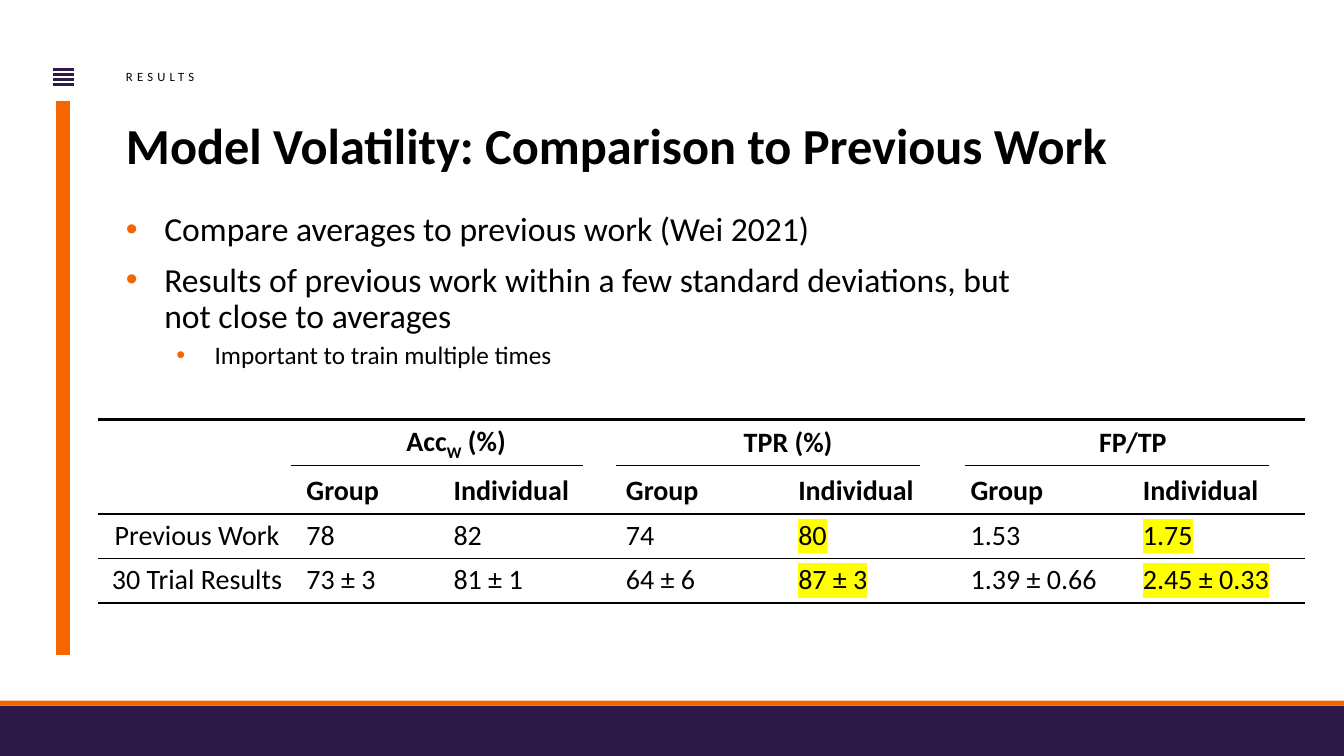
from pptx import Presentation, util as u
from pptx.dml.color import RGBColor
from pptx.enum import shapes, text
from pptx.oxml import xmlchemy as x
from pptx.oxml.ns import qn
from lxml import etree

BLACK = RGBColor(0, 0, 0)
ORANGE = RGBColor(0xF5, 0x66, 0x00)
PURPLE = RGBColor(0x2E, 0x1A, 0x47)
YELLOW = RGBColor(0xFF, 0xFF, 0x00)
FONT = "Calibri"
COLS, ROWS = 160, 90
NO_STYLE = "{2D5ABB26-0587-4C30-8999-92F81FD0307C}"


def grid(n):
    """Turn grid units, twelve to the inch, into a length."""
    return u.Inches(n / 12)


def add_sub(parent, tag, **attrs):
    """Append a drawing element with the given attributes."""
    return etree.SubElement(parent, qn(tag), attrs)


def add_color(parent, tag, color):
    """Append a colour-holding element."""
    el = add_sub(parent, tag)
    add_sub(el, "a:srgbClr", val=str(color))
    return el


def add_line(s, x1, y1, x2, y2, color, width):
    """Draw a straight line between two grid points."""
    line = s.shapes.add_connector(shapes.MSO_CONNECTOR.STRAIGHT,
                                  grid(x1), grid(y1), grid(x2), grid(y2))
    line.line.color.rgb = color
    line.line.width = u.Pt(width)
    add_sub(line._element.spPr, "a:effectLst")


def add_bar(s, box, color):
    """Draw a plain filled rectangle."""
    bar = s.shapes.add_shape(shapes.MSO_SHAPE.RECTANGLE, *map(grid, box))
    bar.shadow.inherit = False
    bar.fill.solid()
    bar.fill.fore_color.rgb = color
    bar.line.fill.background()


def add_run(p, words, size, bold=False):
    """Add one formatted run to a paragraph."""
    r = p.add_run()
    r.text = words
    r.font.size, r.font.bold, r.font.name = u.Pt(size), bold, FONT
    r.font.color.rgb = BLACK
    return r


def set_frame(sp, box):
    """Place a text shape on the grid and clear its insets."""
    sp.left, sp.top, sp.width, sp.height = map(grid, box)
    tf = sp.text_frame
    tf.margin_left = tf.margin_right = tf.margin_top = tf.margin_bottom = 0
    tf.word_wrap = True
    tf.auto_size = text.MSO_AUTO_SIZE.NONE
    tf.vertical_anchor = text.MSO_ANCHOR.TOP
    return tf


def draw_frame(s, box):
    """Draw the menu icon, side bar and footer band."""
    left, top, width, height = box
    for i in range(4):
        y = top + 8.28 + 0.6 * i
        add_line(s, left + 6.36, y, left + 8.76, y, PURPLE, 1.75)
    add_line(s, left + 7.5, top + 12, left + 7.5, top + 78, ORANGE, 10)
    add_bar(s, (left, top + height - 6, width, 6), PURPLE)
    add_bar(s, (left, top + height - 6.6, width, 0.6), ORANGE)


def draw_heading(s, box):
    """Write the section label and the slide title."""
    left, top, width, height = box
    label = s.shapes.add_textbox(0, 0, 0, 0)
    p = set_frame(label, (left, top, 50, 1.7)).paragraphs[0]
    p.line_spacing = 0.9
    r = add_run(p, "RESULTS", 9)
    r.font._element.set("spc", "300")

    p = set_frame(s.shapes.title, (left, top + height - 6, width, 6)).paragraphs[0]
    p.alignment = text.PP_ALIGN.LEFT
    p.line_spacing = 0.8
    add_run(p, "Model Volatility: Comparison to Previous Work", 36, True)


def draw_points(s, box):
    """Fill the body placeholder with bulleted points."""
    points = [
        ("Compare averages to previous work (Wei 2021)", 0),
        ("Results of previous work within a few standard deviations, "
         "but not close to averages", 0),
        ("Important to train multiple times", 1),
    ]
    tf = set_frame(s.placeholders[1], box)
    for i, (words, level) in enumerate(points):
        p = tf.add_paragraph() if i else tf.paragraphs[0]
        p.level = level
        pPr = p._p.get_or_add_pPr()
        pPr.set("marL", str(u.Inches(0.38 + 0.5 * level)))
        pPr.set("indent", str(u.Inches(-0.38)))
        add_color(pPr, "a:buClr", ORANGE)
        add_sub(pPr, "a:buFont", typeface="Arial")
        add_sub(pPr, "a:buChar", char="•")
        p.line_spacing = 0.9
        p.space_before = u.Pt((5 if level else 10) if i else 0)
        add_run(p, words, 18 if level else 24)


def set_borders(cell, top, bottom):
    """Give a cell its top and bottom rules, in points, and no fill."""
    tcPr = cell._tc.get_or_add_tcPr()
    for tag, width in (("a:lnT", top), ("a:lnB", bottom)):
        if width:
            ln = add_sub(tcPr, tag, w=str(u.Pt(width)))
            add_color(ln, "a:solidFill", BLACK)
    cell.fill.background()


def draw_table(s, box):
    """Build the results table and the rules under its group headings."""
    left, top, width, height = box
    widths = [23.64, 17.52] + [20.52] * 5
    heights = [5.52, 5.52, 5.2, 5.2]
    borders = [(2.25, 0), (0, 1.5), (1.5, 1), (1, 1.5)]
    rows = [
        ["", "Acc", "", "TPR (%)", "", "FP/TP", ""],
        [""] + ["Group", "Individual"] * 3,
        ["Previous Work", "78", "82", "74", "80", "1.53", "1.75"],
        ["30 Trial Results", "73 ± 3", "81 ± 1", "64 ± 6", "87 ± 3",
         "1.39 ± 0.66", "2.45 ± 0.33"],
    ]
    tbl = s.shapes.add_table(len(rows), len(widths), *map(grid, box)).table
    tbl._tbl.tblPr.find(qn("a:tableStyleId")).text = NO_STYLE
    tbl.first_row = tbl.horz_banding = False
    for col, w in zip(tbl.columns, widths):
        col.width = grid(w)
    for row, h in zip(tbl.rows, heights):
        row.height = grid(h)

    for i, row in enumerate(rows):
        for j, words in enumerate(row):
            cell = tbl.cell(i, j)
            set_borders(cell, *borders[i])
            if i < 2:
                cell.vertical_anchor = text.MSO_ANCHOR.MIDDLE
            p = cell.text_frame.paragraphs[0]
            if i == 0 or j == 0:
                p.alignment = text.PP_ALIGN.CENTER
            if not words:
                continue
            r = add_run(p, words, 20, i < 2)
            if i > 1 and j in (4, 6):
                mark = add_color(r.font._element, "a:highlight", YELLOW)
                r.font._element.find(qn("a:solidFill")).addnext(mark)

    p = tbl.cell(0, 1).text_frame.paragraphs[0]
    add_run(p, "W", 20, True).font._element.set("baseline", "-25000")
    add_run(p, " (%)", 20, True)
    tbl.cell(0, 0).merge(tbl.cell(1, 0))
    for j in (1, 3, 5):
        tbl.cell(0, j).merge(tbl.cell(0, j + 1))

    for start, length in ((23.04, 34.68), (61.68, 36.24), (103.2, 36.24)):
        y = top + heights[0]
        add_line(s, left + start, y, left + start + length, y, BLACK, 1)


def main():
    """Build and save the slide."""
    prs = Presentation()
    prs.slide_width, prs.slide_height = grid(COLS), grid(ROWS)
    s = prs.slides.add_slide(prs.slide_layouts[1])
    draw_frame(s, (0, 0, COLS, ROWS))
    draw_points(s, (15, 25.32, 108.12, 18.84))
    draw_heading(s, (15, 8.4, 131.5, 12.6))
    draw_table(s, (11.64, 49.92, 143.76, 21.44))
    prs.save("out.pptx")


if __name__ == "__main__":
    main()
